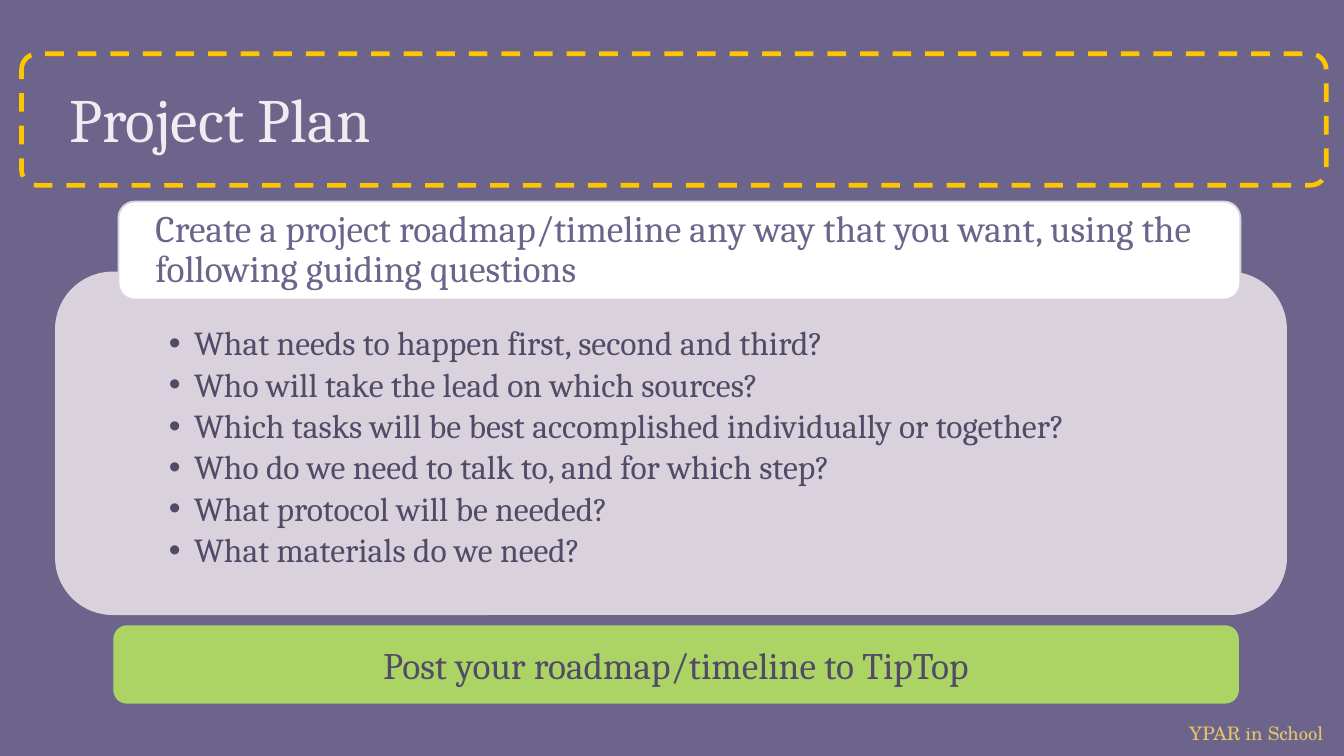
import pptx
import pptx.util
import pptx.dml.color
import pptx.enum.dml
import pptx.enum.shapes
import pptx.enum.text
import pptx.oxml
import pptx.oxml.ns

Pt = pptx.util.Pt
Align = pptx.enum.text.PP_ALIGN
Anchor = pptx.enum.text.MSO_ANCHOR

PURPLE = "6C648B"
INK = "514B68"
EDGE = "DAD3DD"
GREEN = "ACD465"

STEPS = [
    "What needs to happen first, second and third?",
    "Who will take the lead on which sources?",
    "Which tasks will be best accomplished individually or together?",
    "Who do we need to talk to, and for which step?",
    "What protocol will be needed?",
    "What materials do we need?",
]


def rgb(code):
    return pptx.dml.color.RGBColor.from_string(code)


def node(tag, **attrs):
    """Make an empty DrawingML element."""
    item = pptx.oxml.parse_xml(f"<a:{tag} {pptx.oxml.ns.nsdecls('a')}/>")
    for key, val in attrs.items():
        item.set(key, str(val))
    return item


class Deck:
    face = "Cambria"

    def __init__(self, wide, high, back):
        self.show = pptx.Presentation()
        self.show.slide_width, self.show.slide_height = Pt(wide), Pt(high)
        self.slide = self.show.slides.add_slide(self.show.slide_layouts[1])
        self.slide.background.fill.solid()
        self.slide.background.fill.fore_color.rgb = rgb(back)

    def place(self, shape, box):
        shape.left, shape.top, shape.width, shape.height = map(Pt, box)

    def letter(self, shape, lines, size, color, face=None, align=Align.LEFT,
               anchor=Anchor.MIDDLE, pads=(7.2, 3.6, 7.2, 3.6), lead=1, gap=0,
               dot=False, wrap=True):
        """Fill a shape with one paragraph per line."""
        frame = shape.text_frame
        frame.text = "\n".join(lines)
        frame.auto_size = pptx.enum.text.MSO_AUTO_SIZE.NONE
        frame.word_wrap, frame.vertical_anchor = wrap, anchor
        (frame.margin_left, frame.margin_top,
         frame.margin_right, frame.margin_bottom) = map(Pt, pads)
        for para in frame.paragraphs:
            if dot:
                props = para._p.get_or_add_pPr()
                props.set("marL", str(Pt(13.5)))
                props.set("indent", str(-Pt(13.5)))
                props.append(node("buChar", char="•"))
            para.alignment, para.line_spacing = align, lead
            para.space_before, para.space_after = Pt(0), Pt(gap)
            para.font.name, para.font.size = face or self.face, Pt(size)
            para.font.color.rgb = rgb(color)

    def holder(self, index, box, lines, size, color, **style):
        """Use a template placeholder, brought to the front."""
        shape = self.slide.placeholders[index]
        self.slide.shapes._spTree.append(shape._element)
        self.place(shape, box)
        self.letter(shape, lines, size, color, **style)

    def label(self, box, text, size, color, **style):
        shape = self.slide.shapes.add_textbox(*map(Pt, box))
        self.letter(shape, [text], size, color, **style)

    def panel(self, box, fill, line, width=1, round=None, alpha=None,
              dash=False):
        """Draw a rounded panel; a fill of None leaves it hollow."""
        kind = pptx.enum.shapes.MSO_SHAPE.ROUNDED_RECTANGLE
        shape = self.slide.shapes.add_shape(kind, *map(Pt, box))
        shape.shadow.inherit = False
        if round is not None:
            shape.adjustments[0] = round
        if fill:
            shape.fill.solid()
            shape.fill.fore_color.rgb = rgb(fill)
        else:
            shape.fill.background()
        if alpha:
            paint = shape._element.spPr.find(
                ".//" + pptx.oxml.ns.qn("a:srgbClr"))
            paint.append(node("alpha", val=alpha * 1000))
        shape.line.color.rgb, shape.line.width = rgb(line), Pt(width)
        if dash:
            shape.line.dash_style = pptx.enum.dml.MSO_LINE.DASH
        return shape


def main():
    deck = Deck(720, 405, PURPLE)
    deck.label((630, 383, 90, 19.5), "YPAR in School", 10, "E4C469",
               face="TeX Gyre Schola", anchor=Anchor.TOP, wrap=False)
    deck.holder(0, (30, 36, 659, 54), ["Project Plan"], 33, "F0EBF0",
                anchor=Anchor.BOTTOM, pads=(7.2,) * 4)

    deck.panel((30, 146, 659, 183), "E5DFE5", EDGE, alpha=90)
    deck.holder(1, (39.5, 155.5, 641, 165), STEPS, 18, INK,
                anchor=Anchor.TOP, pads=(51, 19.5, 51, 10), lead=0.9,
                gap=2.7, dot=True)

    deck.panel((63.5, 108, 601, 52.5), "FFFFFF", EDGE)
    deck.label((66, 110.5, 596, 47.5),
               "Create a project roadmap/timeline any way that you want, "
               "using the following guiding questions", 20, PURPLE,
               pads=(17.3, 0, 17.3, 0), lead=0.9)

    deck.panel((11.5, 28.8, 699, 70.5), None, "FFC600", width=2.5,
               round=0.12, dash=True)
    post = deck.panel((61.2, 335.5, 602, 41), GREEN, GREEN)
    deck.letter(post, ["Post your roadmap/timeline to TipTop"], 20, INK,
                align=Align.CENTER)
    deck.show.save("out.pptx")


if __name__ == "__main__":
    main()
